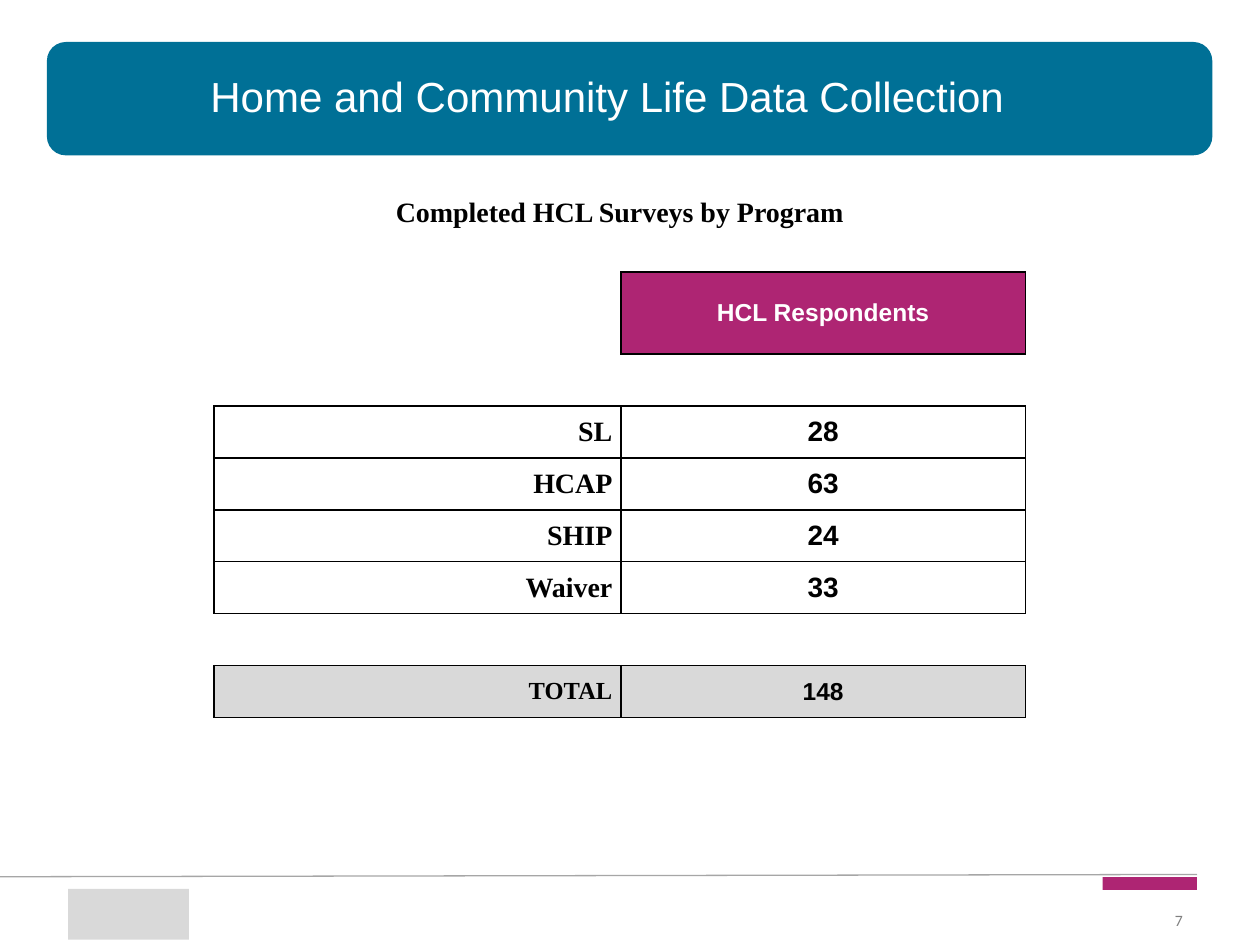
import pptx
import pptx.util
import pptx.dml.color
import pptx.enum.shapes
import pptx.enum.text
import pptx.oxml.ns
from lxml import etree

Pt = pptx.util.Pt
SHAPE = pptx.enum.shapes.MSO_SHAPE
ALIGN = pptx.enum.text.PP_ALIGN
ANCHOR = pptx.enum.text.MSO_ANCHOR
qn = pptx.oxml.ns.qn

COLORS = {
    "teal": "007096", "magenta": "AE2573", "grey": "D9D9D9", "rule": "A6A6A6",
    "number": "7F7F7F", "black": "000000", "white": "FFFFFF",
}
SERIF, SANS = "Times New Roman", "Arial"
COL_WIDTHS = [232.5, 231]
ROW_HEIGHTS = [51.8, 46.8] + [29.7] * 7
PROGRAMS = [("SL", "28"), ("HCAP", "63"), ("SHIP", "24"), ("Waiver", "33")]
TOTAL_ROW = len(ROW_HEIGHTS) - 1
# Cells with a border, as (row, column)
BOXED = {(1, 1)} | {(r, c) for r in (3, 4, 5, 6, TOTAL_ROW) for c in (0, 1)}
EDGES = {"a:lnL": (0, -1), "a:lnR": (0, 1), "a:lnT": (-1, 0), "a:lnB": (1, 0)}


def rgb(name):
    return pptx.dml.color.RGBColor.from_string(COLORS[name])


def write(p, text, color, align=ALIGN.LEFT, **font):
    p.alignment = align
    r = p.add_run()
    r.text = text
    for key, value in font.items():
        setattr(r.font, key, value)
    r.font.color.rgb = rgb(color)


def add_block(s, kind, box, color):
    sp = s.shapes.add_shape(kind, *map(Pt, box))
    sp.shadow.inherit = False
    sp.fill.solid()
    sp.fill.fore_color.rgb = rgb(color)
    sp.line.fill.background()


def add_text(s, box, **frame):
    tf = s.shapes.add_textbox(*map(Pt, box)).text_frame
    tf.word_wrap = True
    for key, value in frame.items():
        setattr(tf, key, value)
    return tf


def add_rule(s, start, end):
    line = s.shapes.add_connector(
        pptx.enum.shapes.MSO_CONNECTOR.STRAIGHT, *map(Pt, start + end))
    line.line.color.rgb = rgb("rule")
    line.line.width = Pt(0.75)
    etree.SubElement(line._element.spPr, qn("a:effectLst"))


def set_borders(cell, row, col):
    tc_pr = cell._tc.get_or_add_tcPr()
    for i, (tag, (dr, dc)) in enumerate(EDGES.items()):
        ln = etree.Element(qn(tag), w=str(Pt(1)))
        if BOXED & {(row, col), (row + dr, col + dc)}:
            fill = etree.SubElement(ln, qn("a:solidFill"))
            etree.SubElement(fill, qn("a:srgbClr"), val=COLORS["black"])
        else:
            etree.SubElement(ln, qn("a:noFill"))
        tc_pr.insert(i, ln)


def fill_cell(cell, text, color="black", fill=None, bottom=3, **font):
    cell.vertical_anchor = ANCHOR.MIDDLE
    margins = {"margin_left": 5, "margin_right": 5, "margin_top": 3, "margin_bottom": bottom}
    for key, value in margins.items():
        setattr(cell, key, Pt(value))
    write(cell.text_frame.paragraphs[0], text, color, bold=True, **font)
    if fill:
        cell.fill.solid()
        cell.fill.fore_color.rgb = rgb(fill)


def add_survey_table(s):
    table = s.shapes.add_table(
        len(ROW_HEIGHTS), 2, Pt(122.4), Pt(103.7),
        Pt(sum(COL_WIDTHS)), Pt(sum(ROW_HEIGHTS))).table
    table.first_row = table.horz_banding = False
    for column, width in zip(table.columns, COL_WIDTHS):
        column.width = Pt(width)
    for row, height in zip(table.rows, ROW_HEIGHTS):
        row.height = Pt(height)
    for row in range(len(ROW_HEIGHTS)):
        for col in range(2):
            cell = table.cell(row, col)
            cell.fill.background()
            if row:
                set_borders(cell, row, col)

    # Heading and column header
    table.cell(0, 0).merge(table.cell(0, 1))
    fill_cell(table.cell(0, 0), "Completed HCL Surveys\u00a0by Program", bottom=19,
              align=ALIGN.CENTER, size=Pt(16), name=SERIF)
    fill_cell(table.cell(1, 1), "HCL Respondents", "white", "magenta",
              align=ALIGN.CENTER, size=Pt(14), name=SANS)

    # Programs and total
    rows = [(i, *program, 16, None) for i, program in enumerate(PROGRAMS, 3)]
    rows.append((TOTAL_ROW, "TOTAL", "148", 14, "grey"))
    for row, label, count, size, fill in rows:
        fill_cell(table.cell(row, 0), label, fill=fill,
                  align=ALIGN.RIGHT, size=Pt(size), name=SERIF)
        fill_cell(table.cell(row, 1), count, fill=fill,
                  align=ALIGN.CENTER, size=Pt(size), name=SANS)


def add_footer(s):
    add_rule(s, (0, 501), (684, 499.7))
    add_block(s, SHAPE.RECTANGLE, (630, 501.3, 54, 7.2), "magenta")
    add_block(s, SHAPE.RECTANGLE, (39, 508, 69, 29), "grey")
    tf = add_text(s, (411.6, 515, 271.4, 21.6), vertical_anchor=ANCHOR.MIDDLE)
    write(tf.paragraphs[0], "7", "number", ALIGN.RIGHT, size=Pt(9), name="Calibri")


def main():
    prs = pptx.Presentation()
    prs.slide_width, prs.slide_height = Pt(720), Pt(540)
    s = prs.slides.add_slide(prs.slide_layouts[6])

    # Title banner
    add_block(s, SHAPE.ROUNDED_RECTANGLE, (26.8, 24, 666, 64.8), "teal")
    tf = add_text(s, (23, 36.7, 648, 31.7))
    write(tf.paragraphs[0], "Home and Community Life Data Collection", "white",
          ALIGN.CENTER, size=Pt(24), name=SANS)

    add_survey_table(s)
    add_footer(s)
    prs.save("out.pptx")


if __name__ == "__main__":
    main()
